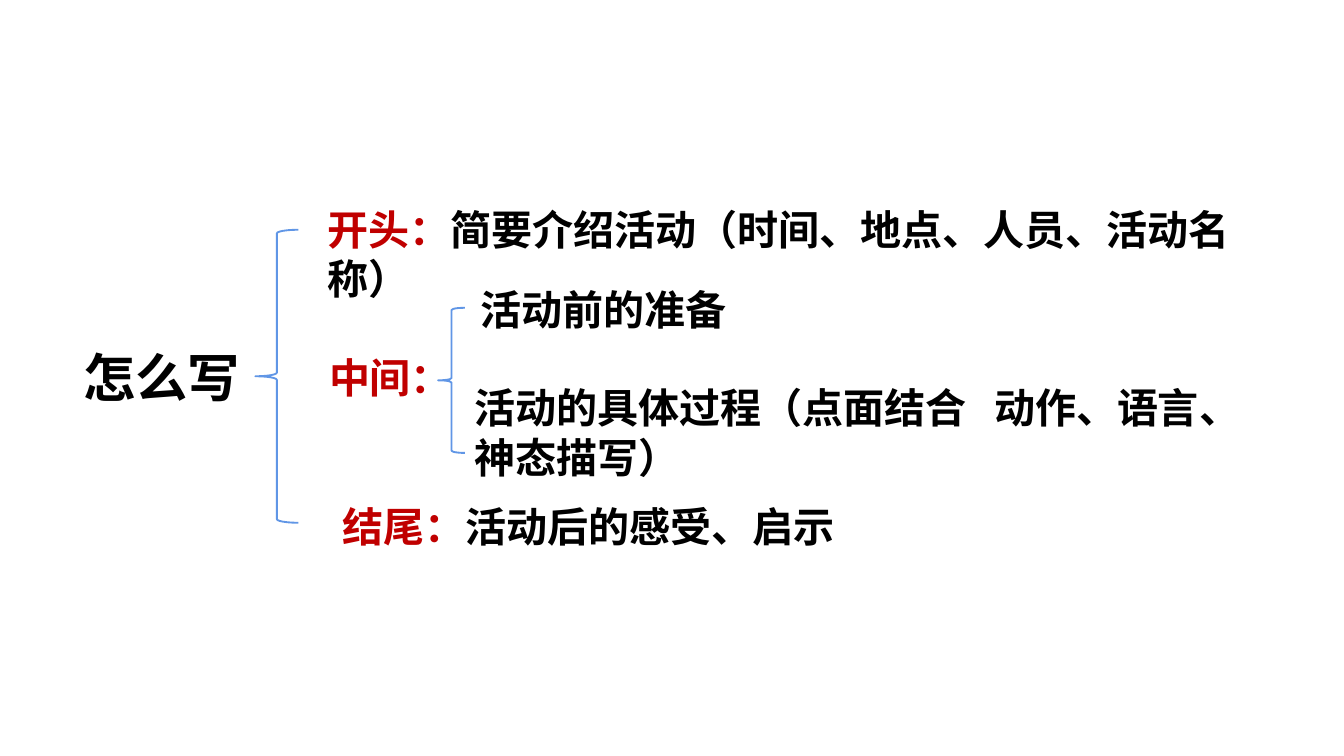
from pptx import Presentation
from pptx.dml.color import RGBColor
from pptx.enum.shapes import MSO_SHAPE
from pptx.enum.text import MSO_AUTO_SIZE
from pptx.util import Inches, Pt
from lxml.etree import SubElement
from pptx.oxml.ns import qn

FONT = "Noto Sans CJK SC"
BLACK = RGBColor(0x00, 0x00, 0x00)
RED = RGBColor(0xC0, 0x00, 0x00)
BLUE = RGBColor(0x60, 0x96, 0xE6)
WIDE_GAP = 1000  # letter spacing of a lone space, in hundredths of a point

# (left, top, width, height), wrap, size, spans of (text, colour)
TEXTS = [
    ((0.52, 2.52, 1.39, 0.57), False, 28, [("怎么写", BLACK)]),
    ((2.34, 1.47, 7.45, 0.47), True, 22,
     [("开头：", RED), ("简要介绍活动（时间、地点、人员、活动名称）", BLACK)]),
    ((2.35, 2.57, 0.93, 0.47), True, 22, [("中间：", RED)]),
    ((2.45, 3.68, 4.73, 0.47), True, 22,
     [("结尾：", RED), ("活动后的感受、启示", BLACK)]),
    ((3.48, 2.07, 2.06, 0.47), False, 22, [("活动前的准备", BLACK)]),
    ((3.43, 2.8, 6.18, 0.84), True, 22,
     [("活动的具体过程（点面结合", BLACK), (" ", BLACK),
      ("动作、语言、神态描写）", BLACK)]),
]
BRACES = [(1.9, 1.71, 0.32, 2.18), (3.26, 2.29, 0.2, 1.08)]


def add_text(page, place, wrap, size, spans):
    box = page.shapes.add_textbox(*map(Inches, place))
    frame = box.text_frame
    frame.word_wrap = wrap
    frame.auto_size = MSO_AUTO_SIZE.SHAPE_TO_FIT_TEXT
    for text, color in spans:
        span = frame.paragraphs[0].add_run()
        span.text = text
        span.font.name = FONT
        span.font.size = Pt(size)
        span.font.bold = True
        span.font.color.rgb = color
        properties = span.font._element
        SubElement(properties, qn("a:ea")).set("typeface", FONT)
        if text == " ":
            properties.set("spc", str(WIDE_GAP))


def add_brace(page, place):
    brace = page.shapes.add_shape(MSO_SHAPE.LEFT_BRACE, *map(Inches, place))
    brace.shadow.inherit = False
    brace.fill.background()
    brace.line.color.rgb = BLUE
    brace.line.width = Pt(1)


deck = Presentation()
deck.slide_width = Inches(10)
deck.slide_height = deck.slide_width * 9 // 16
page = deck.slides.add_slide(deck.slide_layouts[6])
for item in TEXTS:
    add_text(page, *item)
for place in BRACES:
    add_brace(page, place)
deck.save("out.pptx")
